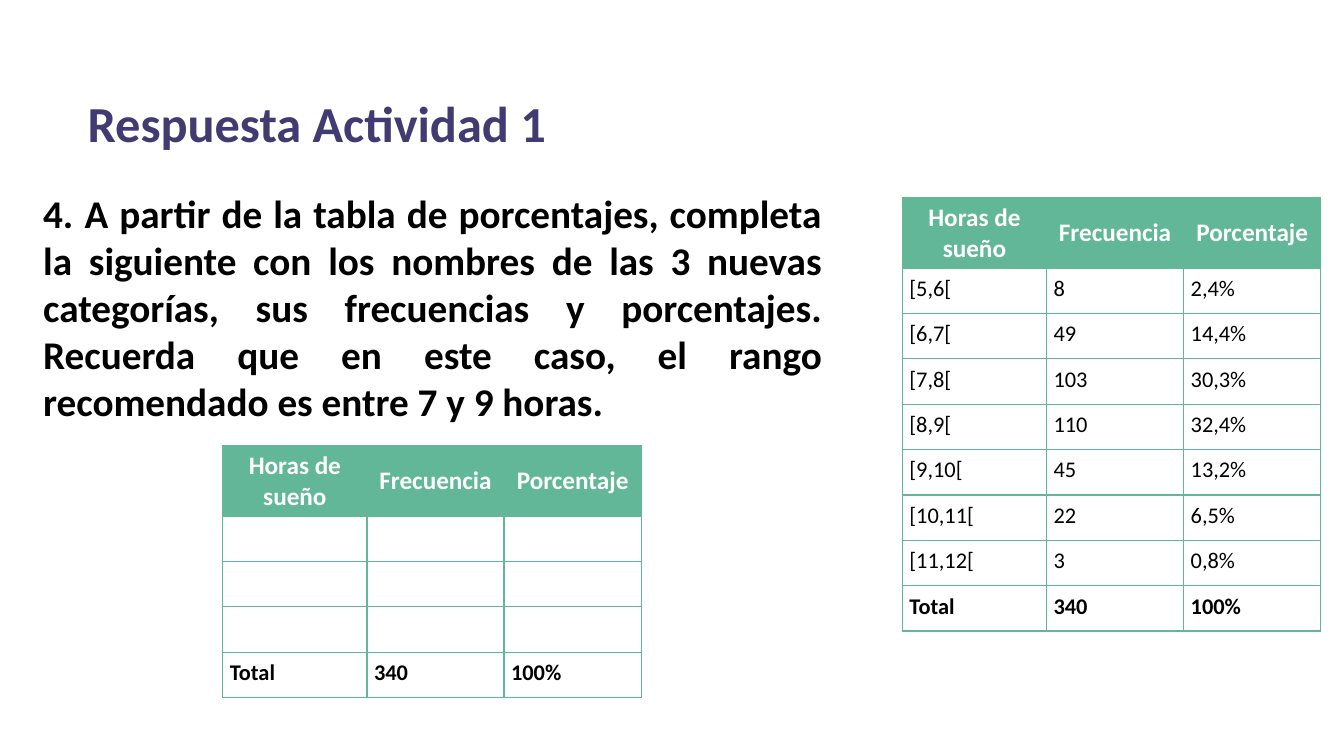
from dataclasses import dataclass

import lxml.etree
import pptx
import pptx.dml.color
import pptx.enum.text
import pptx.oxml.ns
import pptx.util

Inches = pptx.util.Inches
Pt = pptx.util.Pt
ALIGN = pptx.enum.text.PP_ALIGN
ANCHOR = pptx.enum.text.MSO_ANCHOR
qn = pptx.oxml.ns.qn


@dataclass(frozen=True)
class Theme:
    font: str = "Calibri"
    purple: str = "423B71"
    green: str = "63B799"
    black: str = "000000"
    white: str = "FFFFFF"
    title_size: int = 36
    question_size: int = 28
    header_size: int = 18
    cell_size: int = 16
    border: int = 1


THEME = Theme()

COLUMN_WIDTHS = (1.43, 1.36, 1.36)
HEADER_HEIGHT, ROW_HEIGHT = 0.68, 0.45
HEADER = ("Horas de sueño", "Frecuencia", "Porcentaje")
TOTAL = ("Total", "340", "100%")
SLEEP_ROWS = (
    ("[5,6[", "8", "2,4%"),
    ("[6,7[", "49", "14,4%"),
    ("[7,8[", "103", "30,3%"),
    ("[8,9[", "110", "32,4%"),
    ("[9,10[", "45", "13,2%"),
    ("[10,11[", "22", "6,5%"),
    ("[11,12[", "3", "0,8%"),
)
BLANK_ROWS = (("", "", ""),) * 3
QUESTION = (
    "4. A partir de la tabla de porcentajes, completa la siguiente con los "
    "nombres de las 3 nuevas categorías, sus frecuencias y porcentajes. "
    "Recuerda que en este caso, el rango recomendado es entre 7 y 9 horas."
)


def add_run(p, text, size, color, bold):
    r = p.add_run()
    r.text = text
    r.font.name = THEME.font
    r.font.size = Pt(size)
    r.font.bold = bold
    r.font.color.rgb = pptx.dml.color.RGBColor.from_string(color)


def add_text(slide, box, text, size, color, align):
    tf = slide.shapes.add_textbox(*map(Inches, box)).text_frame
    tf.word_wrap = True
    p = tf.paragraphs[0]
    p.alignment = align
    add_run(p, text, size, color, True)


def set_borders(cell):
    tc_pr = cell._tc.get_or_add_tcPr()
    for side in ("a:lnL", "a:lnR", "a:lnT", "a:lnB"):
        ln = lxml.etree.SubElement(tc_pr, qn(side), w=str(Pt(THEME.border)))
        fill = lxml.etree.SubElement(ln, qn("a:solidFill"))
        lxml.etree.SubElement(fill, qn("a:srgbClr"), val=THEME.green)


def fill_header_cell(cell, text):
    cell.fill.solid()
    cell.fill.fore_color.rgb = pptx.dml.color.RGBColor.from_string(THEME.green)
    cell.vertical_anchor = ANCHOR.MIDDLE
    p = cell.text_frame.paragraphs[0]
    p.alignment = ALIGN.CENTER
    add_run(p, text, THEME.header_size, THEME.white, True)


def fill_body_cell(cell, text, bold):
    cell.fill.background()
    cell.margin_left = cell.margin_right = Inches(0.07)
    cell.margin_top = cell.margin_bottom = Inches(0.07)
    if text:
        p = cell.text_frame.paragraphs[0]
        add_run(p, text, THEME.cell_size, THEME.black, bold)


def add_frequency_table(slide, left, top, body_rows):
    """Places a header, the body rows and the total row."""
    rows = (HEADER, *body_rows, TOTAL)
    heights = (HEADER_HEIGHT,) + (ROW_HEIGHT,) * (len(rows) - 1)
    table = slide.shapes.add_table(
        len(rows), len(HEADER), Inches(left), Inches(top),
        Inches(sum(COLUMN_WIDTHS)), Inches(sum(heights)),
    ).table
    table.first_row = table.horz_banding = False
    for column, width in zip(table.columns, COLUMN_WIDTHS):
        column.width = Inches(width)
    for i, (row, height, values) in enumerate(zip(table.rows, heights, rows)):
        row.height = Inches(height)
        for cell, text in zip(row.cells, values):
            set_borders(cell)
            if i == 0:
                fill_header_cell(cell, text)
            else:
                fill_body_cell(cell, text, values is TOTAL)


def build_answer_slide(prs):
    slide = prs.slides.add_slide(prs.slide_layouts[6])
    add_text(slide, (0.77, 0.86, 8.93, 0.71), "Respuesta Actividad 1",
             THEME.title_size, THEME.purple, ALIGN.LEFT)
    add_frequency_table(slide, 8.95, 1.96, SLEEP_ROWS)
    add_text(slide, (0.33, 1.83, 7.92, 2.46), QUESTION,
             THEME.question_size, THEME.black, ALIGN.JUSTIFY)
    add_frequency_table(slide, 2.21, 4.42, BLANK_ROWS)


def main():
    prs = pptx.Presentation()
    prs.slide_width = Inches(13.33)
    prs.slide_height = Inches(7.5)
    build_answer_slide(prs)
    prs.save("out.pptx")


if __name__ == "__main__":
    main()
